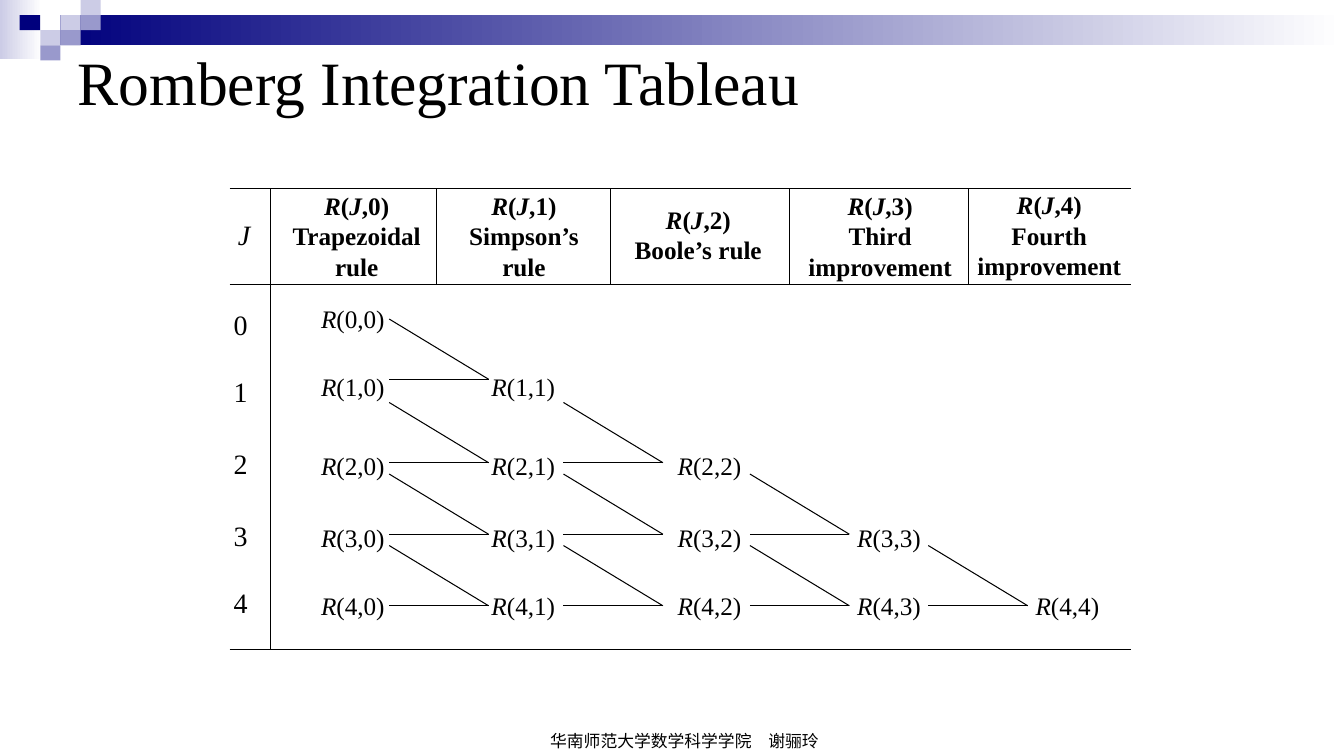
from lxml import etree
from pptx import Presentation
from pptx.dml.color import RGBColor
from pptx.enum.shapes import MSO_CONNECTOR, MSO_SHAPE
from pptx.enum.text import MSO_ANCHOR, PP_ALIGN
from pptx.oxml.ns import qn
from pptx.util import Pt

LEFT, CENTER = PP_ALIGN.LEFT, PP_ALIGN.CENTER
TOP, MIDDLE, BOTTOM = MSO_ANCHOR.TOP, MSO_ANCHOR.MIDDLE, MSO_ANCHOR.BOTTOM
RECTANGLE, STRAIGHT = MSO_SHAPE.RECTANGLE, MSO_CONNECTOR.STRAIGHT
color = RGBColor.from_string

BLACK, NAVY, LAVENDER, PERIWINKLE, WHITE = "000000", "00007D", "CCCCE6", "9999CC", "FFFFFF"

presentation = Presentation()
presentation.slide_width, presentation.slide_height = Pt(960), Pt(540)
slide = presentation.slides.add_slide(presentation.slide_layouts[6])


def add_text(box, paragraphs, size, align=CENTER, anchor=TOP, bold=False, inset=(0, 0)):
    """Each paragraph is a list of runs; the variables R and J are set in italics."""
    frame = slide.shapes.add_textbox(*map(Pt, box)).text_frame
    horizontal, vertical = map(Pt, inset)
    frame_format = {"word_wrap": True, "vertical_anchor": anchor,
                    "margin_left": horizontal, "margin_right": horizontal,
                    "margin_top": vertical, "margin_bottom": vertical}
    for name, value in frame_format.items():
        setattr(frame, name, value)
    for index, runs in enumerate(paragraphs):
        paragraph = frame.add_paragraph() if index else frame.paragraphs[0]
        paragraph.alignment = align
        for text in runs:
            run = paragraph.add_run()
            run.text = text
            font_format = {"name": "Times New Roman", "size": Pt(size),
                           "bold": bold, "italic": text in ("R", "J")}
            for name, value in font_format.items():
                setattr(run.font, name, value)
            run.font.color.rgb = color(BLACK)


def add_line(*ends):
    line = slide.shapes.add_connector(STRAIGHT, *map(Pt, ends))
    line.line.color.rgb = color(BLACK)
    line.line.width = Pt(0.75)
    etree.SubElement(line._element.spPr, qn("a:effectLst"))


# Banner: two gradient bars and a mosaic of small tiles
banner = [
    (0, 0, 30, 42, [LAVENDER, WHITE]),
    (43.2, 10.8, 916.8, 21.6, [NAVY, WHITE]),
    (43.2, 10.8, 14.4, 10.8, [LAVENDER]),
    (57.6, 0, 14.4, 10.8, [LAVENDER]),
    (57.6, 10.8, 14.4, 10.8, [PERIWINKLE]),
    (28.8, 21.6, 14.4, 10.8, [LAVENDER]),
    (14, 10.8, 14.8, 10.8, [NAVY]),
    (43.2, 21.6, 14.4, 10.8, [PERIWINKLE]),
    (28.8, 32.4, 14.4, 10.8, [PERIWINKLE]),
]
for left, top, width, height, colors in banner:
    shape = slide.shapes.add_shape(RECTANGLE, Pt(left), Pt(top), Pt(width), Pt(height))
    shape.shadow.inherit = False
    shape.line.fill.background()
    if len(colors) == 1:
        shape.fill.solid()
        shape.fill.fore_color.rgb = color(colors[0])
    else:
        shape.fill.gradient()
        shape.fill.gradient_angle = 0
        for stop, stop_color in zip(shape.fill.gradient_stops, colors):
            stop.color.rgb = color(stop_color)

add_text((48.2, 3.6, 864, 108), [["Romberg Integration Tableau"]], 44, LEFT, MIDDLE,
         inset=(7.2, 3.6))
add_text((375, 504, 228, 36), [["华南师范大学数学科学学院　谢骊玲"]], 12, CENTER, BOTTOM,
         inset=(7.2, 3.6))

# Rules of the tableau
table_top, header_bottom, table_bottom = 134.6, 203, 463.7
for y in (table_top, header_bottom, table_bottom):
    add_line(164, y, 808, y)
add_line(193, table_top, 193, table_bottom)
for x in (311.8, 436.3, 563.8, 692):
    add_line(x, table_top, x, header_bottom)

# Header row
add_text((170, 155, 25, 24), [["J"]], 20, LEFT)
headers = [
    (203.8, 136, 102, "Trapezoidal rule"),
    (323.3, 136, 102, "Simpson’s rule"),
    (447.8, 146, 102, "Boole’s rule"),
    (571.7, 136, 114, "Third improvement"),
    (691.2, 135.4, 116.6, "Fourth improvement"),
]
for column, (left, top, width, rule) in enumerate(headers):
    add_text((left, top, width, 65.5), [["R", "(", "J", f",{column})"], [rule]], 18, bold=True)

# Row numbers and the triangle of entries
number_tops = [219.6, 267.8, 319, 370, 418.3]
entry_tops = [216.7, 265, 322, 373, 422]
entry_lefts = [218.2, 340, 473, 601.2, 728.6]
for row, (number_top, entry_top) in enumerate(zip(number_tops, entry_tops)):
    add_text((167, number_top, 25, 24), [[str(row)]], 20, LEFT)
    for column, left in enumerate(entry_lefts[:row + 1]):
        add_text((left, entry_top, 67.7, 21.6), [["R", f"({row},{column})"]], 18)

# Each entry is joined to the two entries on its left
link_starts = [278, 402.5, 535.7, 663.1]
link_ends = [270.9, 330.5, 381.6, 432.7]
link_width, link_drop = 71, 43
for row, end_y in enumerate(link_ends, 1):
    for start_x in link_starts[:row]:
        for start_y in (end_y - link_drop, end_y):
            add_line(start_x, start_y, start_x + link_width, end_y)

presentation.save("out.pptx")
